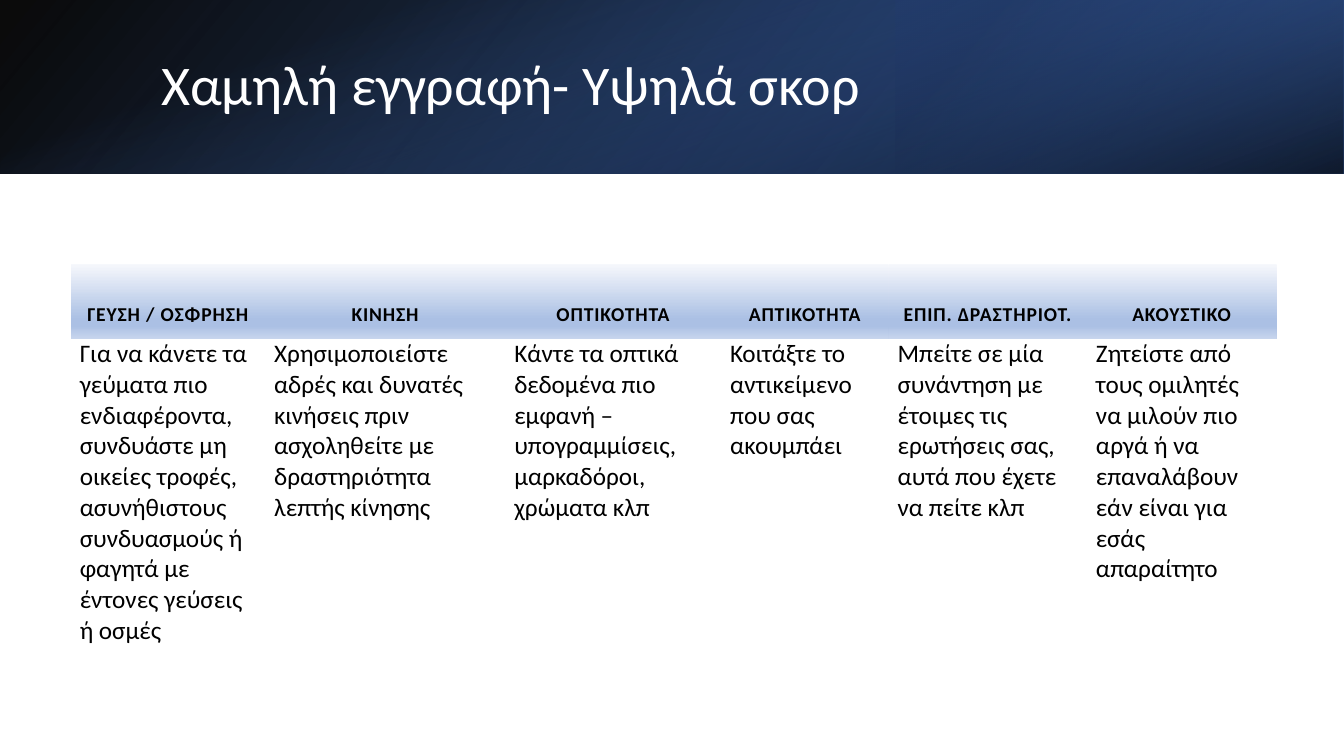
from lxml import etree
from pptx import Presentation
from pptx.dml.color import RGBColor
from pptx.enum import shapes, text
from pptx.oxml import ns
from pptx.util import Cm, Pt

SLIDE_W, SLIDE_H, BAND_H = 33.87, 19.05, 4.37
NO_GRID = "{2D5ABB26-0587-4C30-8999-92F81FD0307C}"
HEADER_STOPS = [(0, "F6F8FC", 100), (74, "ABC0E4", 100),
                (83, "ABC0E4", 100), (100, "C7D5ED", 100)]
COLUMNS = [
    (4.9, "ΓΕΥΣΗ / ΟΣΦΡΗΣΗ",
     "Για να κάνετε τα γεύματα πιο ενδιαφέροντα, συνδυάστε μη οικείες τροφές, "
     "ασυνήθιστους συνδυασμούς ή φαγητά με έντονες γεύσεις ή οσμές"),
    (6.05, "ΚΙΝΗΣΗ",
     "Χρησιμοποιείστε αδρές και δυνατές κινήσεις πριν ασχοληθείτε με "
     "δραστηριότητα λεπτής κίνησης"),
    (5.44, "ΟΠΤΙΚΟΤΗΤΑ",
     "Κάντε τα οπτικά δεδομένα πιο εμφανή – υπογραμμίσεις, μαρκαδόροι, "
     "χρώματα κλπ"),
    (4.22, "ΑΠΤΙΚΟΤΗΤΑ", "Κοιτάξτε το αντικείμενο που σας ακουμπάει"),
    (5, "ΕΠΙΠ. ΔΡΑΣΤΗΡΙΟΤ.",
     "Μπείτε σε μία συνάντηση με έτοιμες τις ερωτήσεις σας, αυτά που έχετε "
     "να πείτε κλπ"),
    (4.78, "ΑΚΟΥΣΤΙΚΟ",
     "Ζητείστε από τους ομιλητές να μιλούν πιο αργά ή να επαναλάβουν εάν "
     "είναι για εσάς απαραίτητο"),
]


def rgb(value):
    """Return the colour for a hex string."""
    return RGBColor.from_string(value)


def add_gradient(props, stops, angle):
    """Put a linear gradient of (position, colour, opacity) stops in props."""
    grad = etree.Element(ns.qn("a:gradFill"), rotWithShape="1")
    stop_list = etree.SubElement(grad, ns.qn("a:gsLst"))
    for pos, color, opacity in stops:
        gs = etree.SubElement(stop_list, ns.qn("a:gs"), pos=str(pos * 1000))
        clr = etree.SubElement(gs, ns.qn("a:srgbClr"), val=color)
        etree.SubElement(clr, ns.qn("a:alpha"), val=str(opacity * 1000))
    etree.SubElement(grad, ns.qn("a:lin"), ang=str(angle * 60000), scaled="0")
    props.insert(2, grad)


def add_band(s, box, stops, angle, rotation=0, flip=False):
    """Add a borderless gradient rectangle."""
    sp = s.shapes.add_shape(shapes.MSO_SHAPE.RECTANGLE, *map(Cm, box))
    sp.shadow.inherit = False
    sp.line.fill.background()
    sp.rotation = rotation
    props = sp._element.spPr
    if flip:
        props.xfrm.set("flipH", "1")
    add_gradient(props, stops, angle)


def write(tf, content, size, color="000000", bold=False, spacing=0,
          align=text.PP_ALIGN.LEFT, line=1.0):
    """Write one formatted paragraph in a text frame."""
    tf.word_wrap = True
    p = tf.paragraphs[0]
    p.alignment, p.line_spacing = align, line
    r = p.add_run()
    r.text = content
    r.font.name, r.font.size, r.font.bold = "Calibri", Pt(size), bold
    r.font.color.rgb = rgb(color)
    r._r.get_or_add_rPr().set("spc", str(spacing))


def add_title(s, content):
    """Add the slide title over the band."""
    sp = s.shapes.add_textbox(Cm(3.81), Cm(0.97), Cm(27.89), Cm(2.44))
    sp.text_frame.vertical_anchor = text.MSO_ANCHOR.MIDDLE
    write(sp.text_frame, content, 40, color="FFFFFF", line=0.9)


def set_margins(cell, top):
    """Set the cell margins with the given top one."""
    cell.margin_left = cell.margin_right = Cm(0.23)
    cell.margin_top, cell.margin_bottom = Cm(top), Cm(0.3)


def add_advice_table(s):
    """Add the table with one column of advice for each sense."""
    width = sum(column[0] for column in COLUMNS)
    frame = s.shapes.add_table(2, len(COLUMNS), Cm(1.78), Cm(6.65),
                               Cm(width), Cm(10.08))
    table = frame.table
    table._tbl.tblPr.find(ns.qn("a:tableStyleId")).text = NO_GRID
    table.horz_banding = False
    table.rows[0].height, table.rows[1].height = Cm(1.88), Cm(8.2)
    for i, (col_width, heading, advice) in enumerate(COLUMNS):
        table.columns[i].width = Cm(col_width)
        head, body = table.cell(0, i), table.cell(1, i)
        set_margins(head, 0.3)
        head.vertical_anchor = text.MSO_ANCHOR.BOTTOM
        add_gradient(head._tc.get_or_add_tcPr(), HEADER_STOPS, 90)
        write(head.text_frame, heading, 14, bold=True, spacing=60,
              align=text.PP_ALIGN.CENTER)
        set_margins(body, 0)
        body.fill.background()
        write(body.text_frame, advice, 18)


def main():
    """Build and save the slide."""
    prs = Presentation()
    prs.slide_width, prs.slide_height = Cm(SLIDE_W), Cm(SLIDE_H)
    s = prs.slides.add_slide(prs.slide_layouts[6])
    add_band(s, (0, 0, SLIDE_W, BAND_H),
             [(0, "000000", 96), (100, "2F5597", 100)], 140, flip=True)
    add_band(s, (SLIDE_W * 2 / 3, 0, SLIDE_W / 3, BAND_H),
             [(19, "203864", 68), (100, "4472C4", 79)], 320, 180, True)
    offset = (SLIDE_W - BAND_H) / 2
    add_band(s, (offset, -offset, BAND_H, SLIDE_W),
             [(23, "4472C4", 0), (99, "000000", 74)], 340, 90)
    add_title(s, "Χαμηλή εγγραφή- Υψηλά σκορ")
    add_advice_table(s)
    prs.save("out.pptx")


if __name__ == "__main__":
    main()
